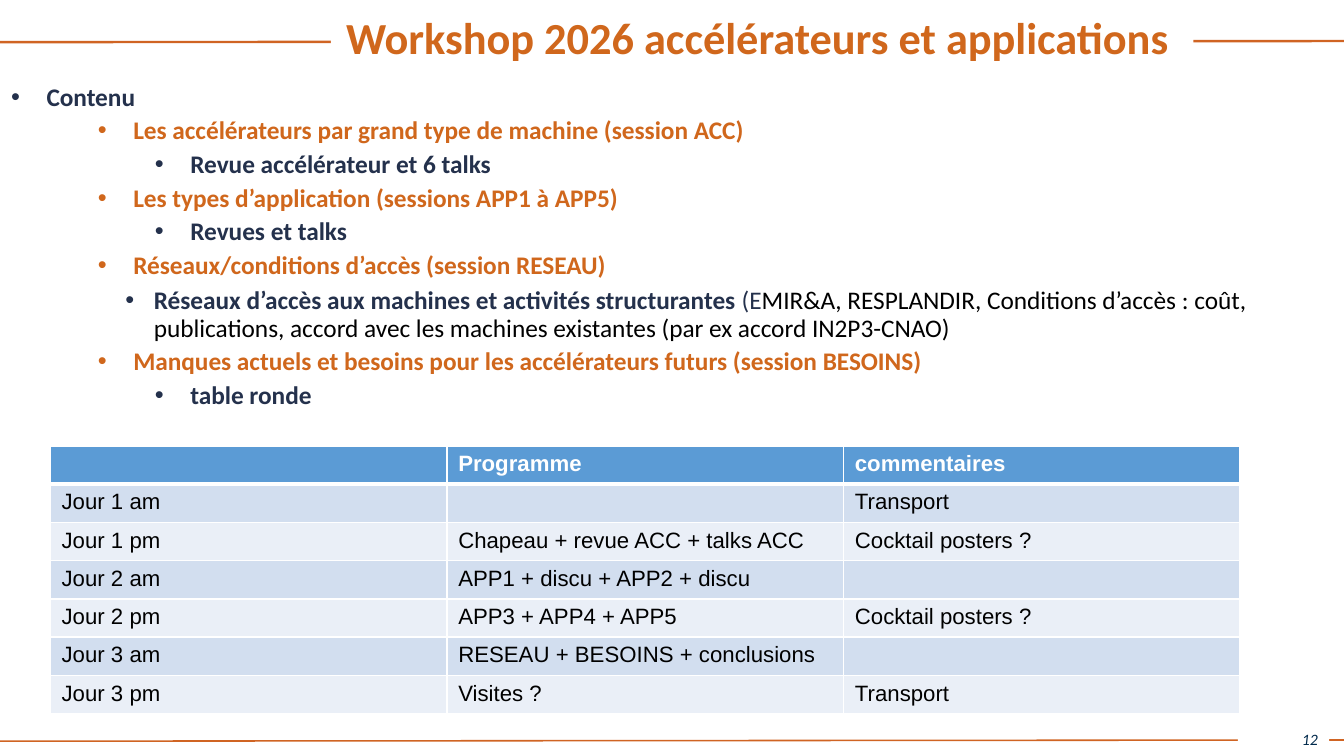
from dataclasses import dataclass

from lxml.etree import SubElement
from pptx import Presentation
from pptx.dml.color import RGBColor
from pptx.enum.shapes import MSO_CONNECTOR
from pptx.enum.text import MSO_ANCHOR, PP_ALIGN
from pptx.oxml.ns import qn
from pptx.util import Inches, Pt


@dataclass(frozen=True)
class Theme:
    orange: str = "D0671C"
    rule: str = "D06423"
    navy: str = "24314C"
    number: str = "00294B"
    black: str = "000000"
    white: str = "FFFFFF"
    header: str = "5B9BD5"
    bands: tuple = ("D2DEEF", "EAEFF7")
    text_font: str = "Calibri"
    table_font: str = "Arial"
    title_size: int = 28
    body_size: int = 16
    table_size: int = 14
    number_size: int = 10


THEME = Theme()
TITLE = "Workshop 2026 accélérateurs et applications "
PAGE_NUMBER = "12"
LEVELS = {
    "heading": (0.31, 0.31, 0),
    "topic": (1.07, 0.31, 4),
    "detail": (1.57, 0.31, 4),
    "network": (1.25, 0.25, 5),
}
OUTLINE = [
    ("heading", [("Contenu", THEME.navy, True)]),
    ("topic", [("Les accélérateurs par grand type de machine (session ACC)", THEME.orange, True)]),
    ("detail", [("Revue accélérateur et 6 talks", THEME.navy, True)]),
    ("topic", [("Les types d’application (sessions APP1 à APP5)", THEME.orange, True)]),
    ("detail", [("Revues et talks", THEME.navy, True)]),
    ("topic", [("Réseaux/conditions d’accès (session RESEAU)", THEME.orange, True)]),
    ("network", [
        ("Réseaux d’accès aux machines et activités structurantes ", THEME.navy, True),
        ("(E", THEME.navy, False),
        ("MIR&A, RESPLANDIR, Conditions d’accès : coût, publications, accord avec les "
         "machines existantes (par ex accord IN2P3-CNAO)", THEME.black, False),
    ]),
    ("topic", [("Manques actuels et besoins pour les accélérateurs futurs (session BESOINS)",
                THEME.orange, True)]),
    ("detail", [("table ronde", THEME.navy, True)]),
]
PROGRAMME = [
    ("", "Programme", "commentaires"),
    ("Jour 1 am", "", "Transport"),
    ("Jour 1 pm", "Chapeau + revue ACC + talks ACC", "Cocktail posters ?"),
    ("Jour 2 am", "APP1 + discu + APP2 + discu", ""),
    ("Jour 2 pm", "APP3 + APP4 + APP5", "Cocktail posters ?"),
    ("Jour 3 am", "RESEAU + BESOINS + conclusions", ""),
    ("Jour 3 pm", "Visites ?", "Transport"),
]
RULES = [(6.5, 6.49, 1), (0.37, 0.36, 1.5)]
SLIDE_WIDTH, SLIDE_HEIGHT = 11.78, 6.63


def color(value):
    return RGBColor.from_string(value)


def style_font(font, name, size, value, bold=False, italic=False):
    font.name = name
    font.size = Pt(size)
    font.color.rgb = color(value)
    font.bold = bold
    font.italic = italic


def place(shape, left, top, width, height):
    shape.left, shape.top = Inches(left), Inches(top)
    shape.width, shape.height = Inches(width), Inches(height)


def fill_white(shape):
    shape.fill.solid()
    shape.fill.fore_color.rgb = color(THEME.white)


def add_rules(slide):
    for left_y, right_y, width in RULES:
        rule = slide.shapes.add_connector(
            MSO_CONNECTOR.STRAIGHT,
            Inches(SLIDE_WIDTH), Inches(right_y), Inches(0), Inches(left_y))
        rule.line.color.rgb = color(THEME.rule)
        rule.line.width = Pt(width)
        SubElement(rule._element.spPr, qn("a:effectLst"))


def add_page_number(slide):
    box = slide.shapes.add_textbox(Inches(10.85), Inches(6.34), Inches(0.8), Inches(0.29))
    fill_white(box)
    frame = box.text_frame
    frame.word_wrap = True
    frame.vertical_anchor = MSO_ANCHOR.MIDDLE
    frame.text = PAGE_NUMBER
    paragraph = frame.paragraphs[0]
    paragraph.alignment = PP_ALIGN.RIGHT
    style_font(paragraph.runs[0].font, THEME.text_font, THEME.number_size,
               THEME.number, italic=True)


def set_title(slide):
    title = slide.shapes.title
    place(title, 2.9, 0, 7.56, 0.71)
    fill_white(title)
    frame = title.text_frame
    frame.word_wrap = True
    frame.vertical_anchor = MSO_ANCHOR.MIDDLE
    frame.text = TITLE
    paragraph = frame.paragraphs[0]
    paragraph.alignment = PP_ALIGN.CENTER
    paragraph.line_spacing = 0.9
    style_font(paragraph.runs[0].font, THEME.text_font, THEME.title_size,
               THEME.orange, bold=True)
    slide.shapes._spTree.append(title._element)


def add_outline(slide):
    box = slide.shapes.add_textbox(Inches(0), Inches(0.69), Inches(11.34), Inches(3.1))
    frame = box.text_frame
    frame.word_wrap = True
    for index, (level, pieces) in enumerate(OUTLINE):
        paragraph = frame.add_paragraph() if index else frame.paragraphs[0]
        margin, hanging, space = LEVELS[level]
        properties = paragraph._p.get_or_add_pPr()
        properties.set("marL", str(Inches(margin)))
        properties.set("indent", str(-Inches(hanging)))
        SubElement(properties, qn("a:buFont"), typeface="Arial")
        SubElement(properties, qn("a:buChar"), char="•")
        paragraph.line_spacing = 0.9
        paragraph.space_before = Pt(space)
        for text, value, bold in pieces:
            run = paragraph.add_run()
            run.text = text
            style_font(run.font, THEME.text_font, THEME.body_size, value, bold)


def add_border(cell, edge, width):
    line = SubElement(cell._tc.get_or_add_tcPr(), qn(f"a:{edge}"), w=str(Pt(width)))
    SubElement(SubElement(line, qn("a:solidFill")), qn("a:srgbClr"), val=THEME.white)


def format_cell(cell, text, row):
    is_header = row == 0
    widths = {"lnL": 1, "lnR": 1, "lnT": 3 if row == 1 else 1, "lnB": 3 if is_header else 1}
    for edge, width in widths.items():
        add_border(cell, edge, width)
    cell.fill.solid()
    cell.fill.fore_color.rgb = color(THEME.header if is_header else THEME.bands[(row - 1) % 2])
    paragraph = cell.text_frame.paragraphs[0]
    if text:
        paragraph.text = text
        style_font(paragraph.runs[0].font, THEME.table_font, THEME.table_size,
                   THEME.white if is_header else THEME.black, bold=is_header)
    else:
        SubElement(paragraph._p, qn("a:endParaRPr"), sz=str(THEME.table_size * 100))


def add_programme(slide):
    table = slide.shapes.add_table(
        len(PROGRAMME), len(PROGRAMME[0]),
        Inches(0.44), Inches(3.91), Inches(10.43), Inches(2.35)).table
    for row, texts in enumerate(PROGRAMME):
        for column, text in enumerate(texts):
            format_cell(table.cell(row, column), text, row)


def main():
    presentation = Presentation()
    presentation.slide_width = Inches(SLIDE_WIDTH)
    presentation.slide_height = Inches(SLIDE_HEIGHT)
    slide = presentation.slides.add_slide(presentation.slide_layouts[5])
    add_rules(slide)
    add_page_number(slide)
    set_title(slide)
    add_outline(slide)
    add_programme(slide)
    presentation.save("out.pptx")


if __name__ == "__main__":
    main()
